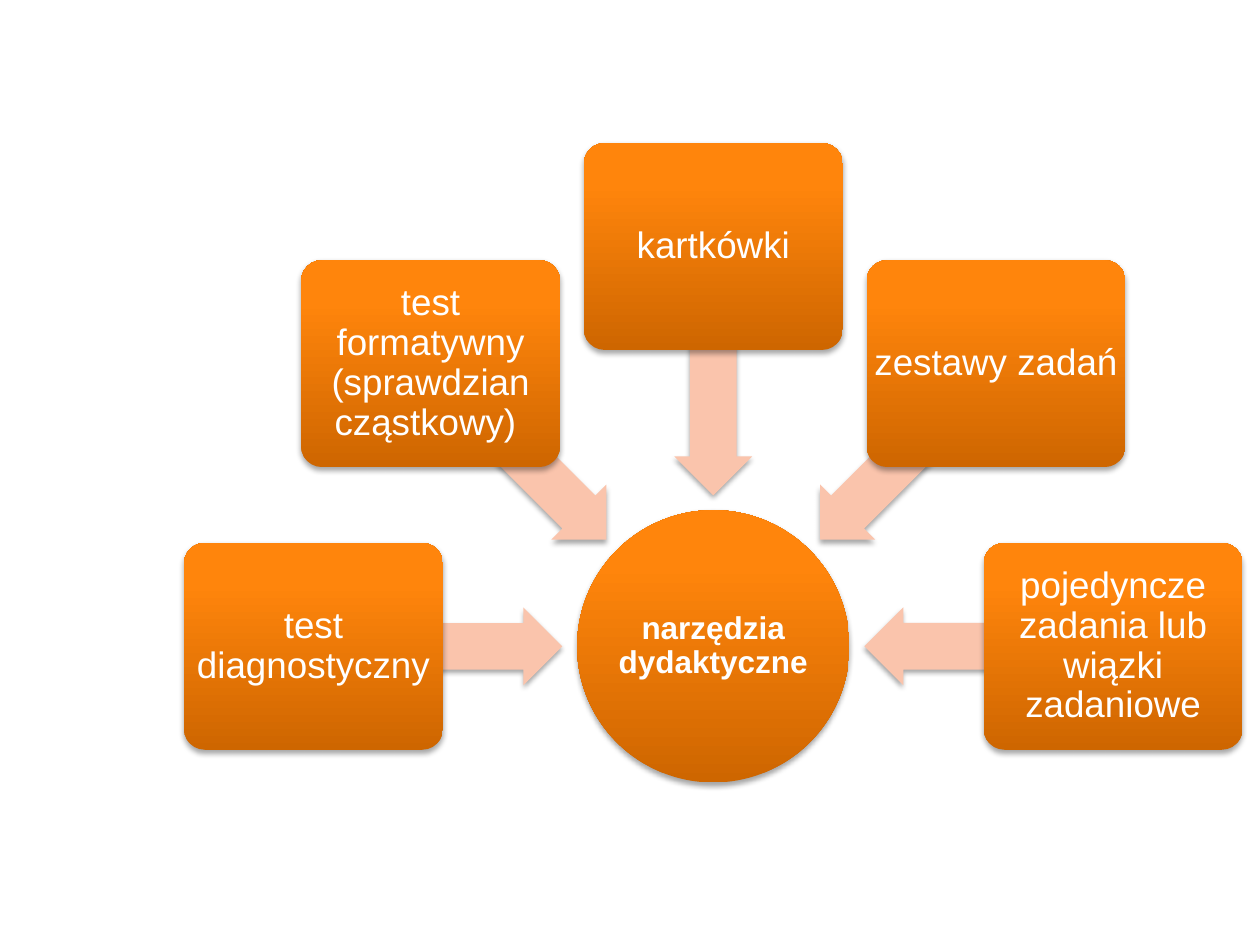
from math import cos, radians, sin

from lxml.etree import SubElement
from pptx import Presentation
from pptx.dml.color import RGBColor
from pptx.enum.shapes import MSO_SHAPE
from pptx.enum.text import MSO_ANCHOR, PP_ALIGN
from pptx.oxml.ns import qn
from pptx.util import Cm, Pt

CENTER_LABEL = "narzędzia dydaktyczne"
TOOLS = [
    "test diagnostyczny",
    "test formatywny (sprawdzian cząstkowy) ",
    "kartkówki",
    "zestawy zadań ",
    "pojedyncze zadania lub wiązki zadaniowe",
]

WHITE = RGBColor(0xFF, 0xFF, 0xFF)
BLACK = RGBColor(0x00, 0x00, 0x00)
PEACH = RGBColor(0xFA, 0xC4, 0xAC)
ORANGE_STOPS = [
    (0, RGBColor(0xCE, 0x66, 0x00)),
    (80, RGBColor(0xFF, 0x85, 0x0C)),
    (100, RGBColor(0xFF, 0x85, 0x0E)),
]

CENTER_X, CENTER_Y = 14.38, 13.03
CIRCLE_SIZE = 5.49
BOX_WIDTH, BOX_HEIGHT = 5.22, 4.17
ARROW_WIDTH, ARROW_HEIGHT = 5.03, 1.57
BOX_RADIUS, ARROW_RADIUS = 8.06, 5.56
FIRST_ANGLE, ANGLE_STEP = 180, 45


def add_shadow(shape):
    shape.shadow.inherit = False
    effects = shape._element.spPr.find(qn("a:effectLst"))
    shadow = SubElement(
        effects, qn("a:outerShdw"), blurRad=str(Pt(3.1)), dist=str(Pt(1.8)),
        dir="5400000", rotWithShape="0",
    )
    color = SubElement(shadow, qn("a:srgbClr"), val=str(BLACK))
    SubElement(color, qn("a:alpha"), val="35000")


def add_centered(slide, kind, angle, radius, width, height):
    middle_x = CENTER_X + radius * cos(radians(angle))
    middle_y = CENTER_Y + radius * sin(radians(angle))
    shape = slide.shapes.add_shape(
        kind, Cm(middle_x - width / 2), Cm(middle_y - height / 2), Cm(width), Cm(height)
    )
    shape.line.fill.background()
    add_shadow(shape)
    return shape


def fill_orange(shape):
    shape.fill.gradient()
    shape.fill.gradient_angle = 90
    stops = shape._element.spPr.find(qn("a:gradFill")).find(qn("a:gsLst"))
    for stop in list(stops):
        stops.remove(stop)
    for percent, color in ORANGE_STOPS:
        stop = SubElement(stops, qn("a:gs"), pos=str(percent * 1000))
        SubElement(stop, qn("a:srgbClr"), val=str(color))


def write_label(shape, text, size, bold=False):
    frame = shape.text_frame
    frame.word_wrap = True
    frame.vertical_anchor = MSO_ANCHOR.MIDDLE
    frame.margin_left = frame.margin_right = frame.margin_top = frame.margin_bottom = 0
    paragraph = frame.paragraphs[0]
    paragraph.alignment = PP_ALIGN.CENTER
    paragraph.line_spacing = 0.9
    run = paragraph.add_run()
    run.text = text
    run.font.name = "Arial"
    run.font.size = Pt(size)
    run.font.bold = bold
    run.font.color.rgb = WHITE


def main():
    presentation = Presentation()
    presentation.slide_width = Cm(25.4)
    presentation.slide_height = Cm(19.05)
    slide = presentation.slides.add_slide(presentation.slide_layouts[6])

    circle = add_centered(slide, MSO_SHAPE.OVAL, 0, 0, CIRCLE_SIZE, CIRCLE_SIZE)
    fill_orange(circle)
    write_label(circle, CENTER_LABEL, 18, bold=True)

    for index, tool in enumerate(TOOLS):
        angle = FIRST_ANGLE + index * ANGLE_STEP
        arrow = add_centered(
            slide, MSO_SHAPE.LEFT_ARROW, angle, ARROW_RADIUS, ARROW_WIDTH, ARROW_HEIGHT
        )
        arrow.rotation = angle % 360
        arrow.adjustments[0] = 0.6
        arrow.adjustments[1] = 0.5
        arrow.fill.solid()
        arrow.fill.fore_color.rgb = PEACH

        box = add_centered(
            slide, MSO_SHAPE.ROUNDED_RECTANGLE, angle, BOX_RADIUS, BOX_WIDTH, BOX_HEIGHT
        )
        box.adjustments[0] = 0.1
        fill_orange(box)
        write_label(box, tool, 21)

    presentation.save("out.pptx")


if __name__ == "__main__":
    main()
